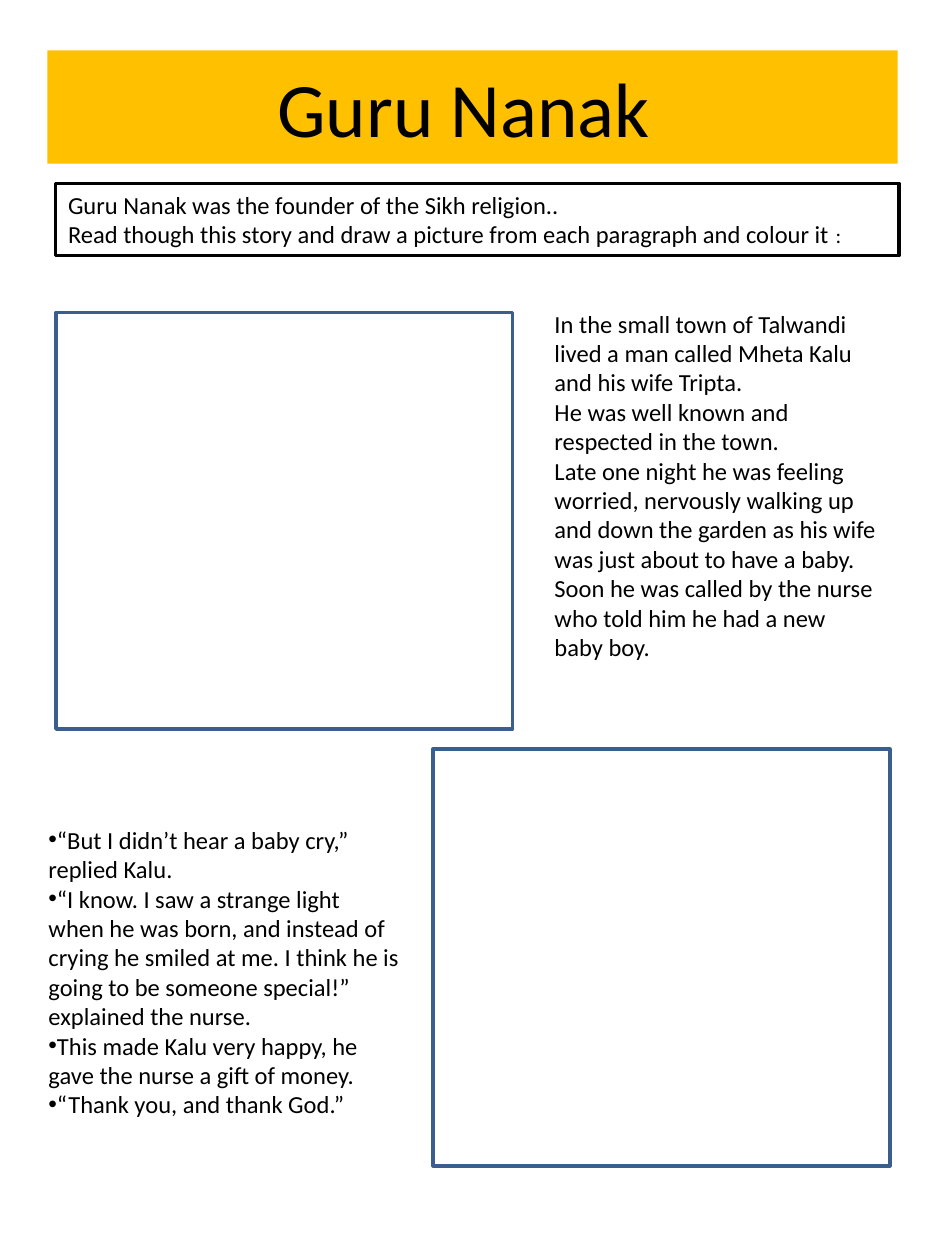
from lxml import etree
from pptx import Presentation
from pptx.dml.color import RGBColor
from pptx.enum.shapes import MSO_SHAPE
from pptx.enum.text import MSO_ANCHOR, PP_ALIGN
from pptx.oxml.ns import qn
from pptx.util import Pt

RECTANGLE = MSO_SHAPE.RECTANGLE
LEFT, CENTER = PP_ALIGN.LEFT, PP_ALIGN.CENTER
TOP, MIDDLE = MSO_ANCHOR.TOP, MSO_ANCHOR.MIDDLE

COLORS = {"banner": "FFC000", "paper": "FFFFFF", "ink": "000000", "frame": "3A5F8C"}
FONT = "Calibri"


def color(name):
    return RGBColor.from_string(COLORS[name])


def write(box, paragraphs, size=14, align=LEFT, anchor=TOP, bullet=None):
    """Fill a box; each paragraph is a list of (text, size or None) spans."""
    frame = box.text_frame
    frame.word_wrap = True
    frame.vertical_anchor = anchor
    for index, spans in enumerate(paragraphs):
        para = frame.add_paragraph() if index else frame.paragraphs[0]
        para.alignment = align
        if bullet:
            properties = para._p.get_or_add_pPr()
            etree.SubElement(properties, qn("a:buFont"), typeface="Arial")
            etree.SubElement(properties, qn("a:buChar"), char=bullet)
        for text, own_size in spans:
            span = para.add_run()
            span.text = text
            span.font.name = FONT
            span.font.size = Pt(own_size or size)
            span.font.color.rgb = color("ink")


deck = Presentation()
deck.slide_width, deck.slide_height = Pt(540), Pt(720)
page = deck.slides.add_slide(deck.slide_layouts[6])

# Title banner, instruction box and the two drawing frames
panels = []
for left, top, width, height, fill, line in [
    (27, 28.8, 486, 64.8, "banner", None),
    (31.8, 104.8, 482, 41.2, "paper", "ink"),
    (32, 178.6, 261, 238, "paper", "frame"),
    (247.5, 428, 261, 238.2, "paper", "frame"),
]:
    panel = page.shapes.add_shape(RECTANGLE, Pt(left), Pt(top), Pt(width), Pt(height))
    panel.shadow.inherit = False
    panel.fill.solid()
    panel.fill.fore_color.rgb = color(fill)
    if line:
        panel.line.color.rgb = color(line)
        panel.line.width = Pt(2)
    else:
        panel.line.fill.background()
    panels.append(panel)

title, instructions = panels[:2]
write(title, [[("Guru Nanak ", None)]], size=44, align=CENTER, anchor=MIDDLE)
write(instructions, [
    [("Guru Nanak was the founder of the Sikh religion..", None)],
    [("Read though this story and draw a picture from each paragraph and colour it ", None),
     (":", 12)],
])

# Story beside the first drawing
birth = page.shapes.add_textbox(Pt(309.8), Pt(172.8), Pt(198.7), Pt(211))
write(birth, [[(text, None)] for text in (
    "In the small town of Talwandi lived a man called Mheta Kalu and his wife Tripta.",
    "He was well known and respected in the town.",
    "Late one night he was feeling worried, nervously walking up and down the garden "
    "as his wife was just about to have a baby. Soon he was called by the nurse who "
    "told him he had a new baby boy.",
)])

# Story beside the second drawing
nurse = page.shapes.add_textbox(Pt(20.6), Pt(467.75), Pt(215.3), Pt(177))
write(nurse, [[(text, None)] for text in (
    "“But I didn’t hear a baby cry,” replied Kalu.",
    "“I know. I saw a strange light when he was born, and instead of crying he smiled "
    "at me. I think he is going to be someone special!” explained the nurse.",
    "This made Kalu very happy, he gave the nurse a gift of money.",
    "“Thank you, and thank God.”",
)], bullet="•")

deck.save("out.pptx")
